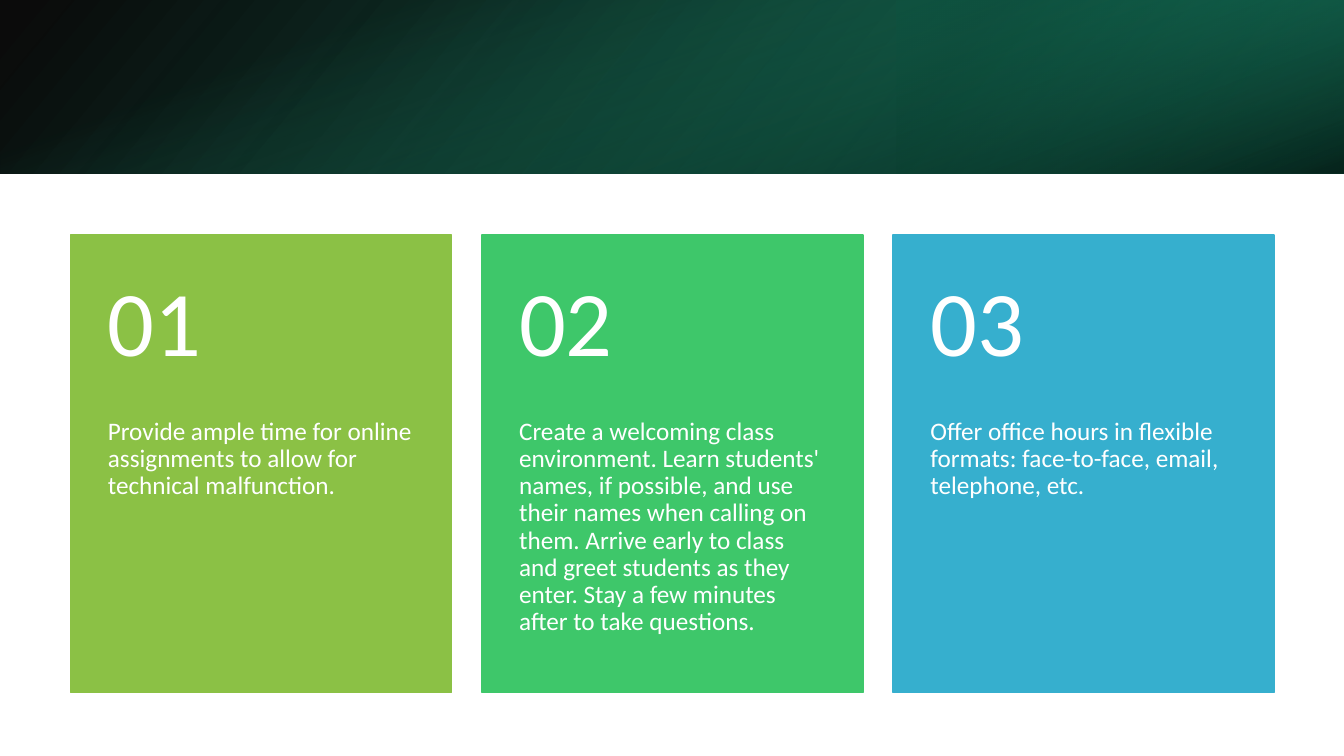
from lxml import etree
from pptx import Presentation
from pptx.dml.color import RGBColor
from pptx.enum.shapes import MSO_SHAPE
from pptx.enum.text import MSO_ANCHOR
from pptx.oxml import parse_xml
from pptx.oxml.ns import nsdecls, qn
from pptx.util import Inches, Pt

RECT = MSO_SHAPE.RECTANGLE
TOP, MID = MSO_ANCHOR.TOP, MSO_ANCHOR.MIDDLE
WIDE, HIGH = 13.333, 7.5
BAND = 1.72

deck = Presentation()
deck.slide_width, deck.slide_height = Inches(WIDE), Inches(HIGH)
slide = deck.slides.add_slide(deck.slide_layouts[6])
shapes = slide.shapes


def paint(hue):
    return RGBColor.from_string(hue)


def write(text, left, top, width, height, size, anchor, pads, hue="FFFFFF"):
    box = shapes.add_textbox(Inches(left), Inches(top), Inches(width), Inches(height))
    frame = box.text_frame
    frame.word_wrap = True
    frame.vertical_anchor = anchor
    frame.margin_left = frame.margin_right = Inches(0.37)
    frame.margin_top, frame.margin_bottom = (Inches(pad) for pad in pads)
    para = frame.paragraphs[0]
    para.line_spacing = 0.9
    run = para.add_run()
    run.text = text
    run.font.size, run.font.name = Pt(size), "Calibri"
    run.font.color.rgb = paint(hue)


# Header band: left, top, width, height, turn, flip, angle, stops (share, hue, opacity)
layers = [
    (0, 0, WIDE, BAND, 0, True, 140,
     [(0, "000000", 96), (100, "16745A", 100)]),
    (WIDE * 2 / 3, 0, WIDE / 3, BAND, 180, True, 320,
     [(19, "0E4D3C", 68), (100, "1D9A78", 79)]),
    ((WIDE - BAND) / 2, (BAND - WIDE) / 2, BAND, WIDE, 90, False, 340,
     [(23, "1D9A78", 0), (99, "000000", 74)]),
]
for left, top, width, height, turn, flip, angle, stops in layers:
    layer = shapes.add_shape(RECT, Inches(left), Inches(top), Inches(width), Inches(height))
    layer.shadow.inherit = False
    layer.line.fill.background()
    layer.rotation = turn
    props = layer.element.spPr
    if flip:
        props.find(qn("a:xfrm")).set("flipH", "1")
    grad = parse_xml(f"<a:gradFill {nsdecls('a')}><a:gsLst/>"
                     f'<a:lin ang="{angle * 60000}" scaled="0"/></a:gradFill>')
    for share, hue, alpha in stops:
        stop = etree.SubElement(grad[0], qn("a:gs"), pos=str(share * 1000))
        color = etree.SubElement(stop, qn("a:srgbClr"), val=hue)
        etree.SubElement(color, qn("a:alpha"), val=str(alpha * 1000))
    props.find(qn("a:prstGeom")).addnext(grad)

# Three cards, evenly spaced
LEFT, STEP, CARD = 0.7, 4.08, 3.78
HEAD, BODY, FOOT = 2.33, 4.15, 6.87
tips = [
    ("8BC145", "Provide ample time for online assignments to allow for technical malfunction."),
    ("3EC76A", "Create a welcoming class environment. Learn students' names, if possible, "
               "and use their names when calling on them. Arrive early to class and greet "
               "students as they enter. Stay a few minutes after to take questions."),
    ("36AFCE", "Offer office hours in flexible formats: face-to-face, email, telephone, etc."),
]
for col, (hue, tip) in enumerate(tips):
    left = LEFT + col * STEP
    card = shapes.add_shape(RECT, Inches(left), Inches(HEAD), Inches(CARD), Inches(FOOT - HEAD))
    card.shadow.inherit = False
    card.fill.solid()
    card.fill.fore_color.rgb = card.line.color.rgb = paint(hue)
    card.line.width = Pt(1)
    write(tip, left, BODY, CARD, FOOT - BODY, size=18, anchor=TOP, pads=(0, 0.36))
    write(f"{col + 1:02}", left, HEAD, CARD, BODY - HEAD, size=66, anchor=MID, pads=(0.18, 0.18))

deck.save("out.pptx")
